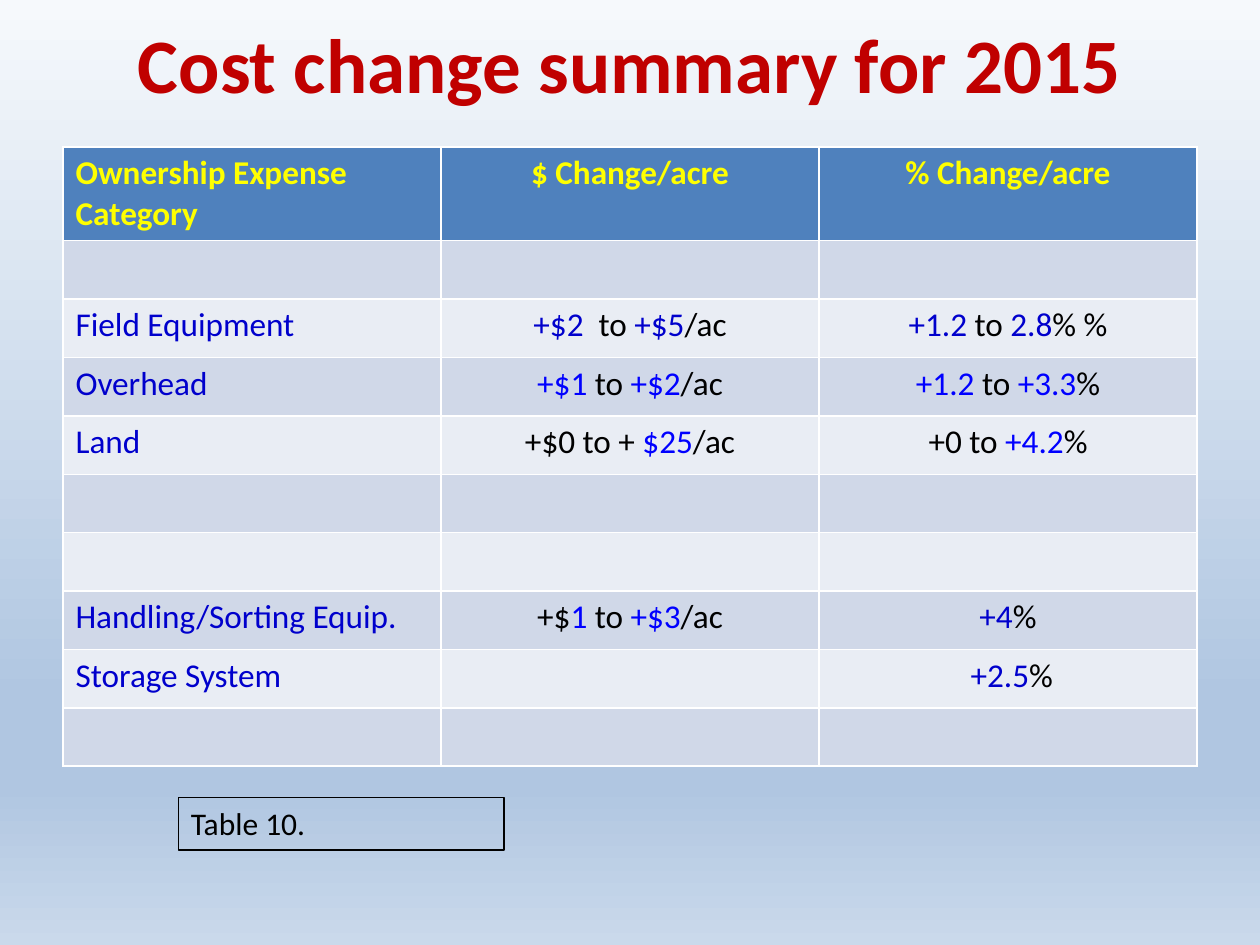
from lxml import etree
from pptx import Presentation
from pptx.dml.color import RGBColor
from pptx.enum import text
from pptx.oxml import ns
from pptx.util import Pt

BLACK = RGBColor(0x00, 0x00, 0x00)
NAVY = RGBColor(0x00, 0x00, 0xCC)
BLUE = RGBColor(0x00, 0x00, 0xFF)
RED = RGBColor(0xC0, 0x00, 0x00)
YELLOW = RGBColor(0xFF, 0xFF, 0x00)
HEADER = RGBColor(0x4F, 0x81, 0xBD)
BANDS = (RGBColor(0xE9, 0xED, 0xF4), RGBColor(0xD0, 0xD8, 0xE8))
SKY = ((0, "F6F9FC"), (74, "B0C6E1"), (83, "B0C6E1"), (100, "CAD9EB"))

EMPTY = ((), (), ())
HEADINGS = tuple(
    ((label, YELLOW),)
    for label in ("Ownership Expense Category", "$ Change/acre", "% Change/acre")
)
COSTS = (
    EMPTY,
    (
        (("Field Equipment", NAVY),),
        (("+$2  ", NAVY), ("to", BLACK), (" +$5", NAVY), ("/ac", BLACK)),
        (("+1.2 ", NAVY), ("to ", BLACK), ("2.8", NAVY), ("% %", BLACK)),
    ),
    (
        (("Overhead", NAVY),),
        (("+$1 ", BLUE), ("to ", BLACK), ("+$2", BLUE), ("/ac", BLACK)),
        (("+1.2 ", BLUE), ("to ", BLACK), ("+3.3", BLUE), ("%", BLACK)),
    ),
    (
        (("Land", NAVY),),
        (("+$0 to + ", BLACK), ("$25", BLUE), ("/ac", BLACK)),
        (("+0 to ", BLACK), ("+4.2", BLUE), ("%", BLACK)),
    ),
    EMPTY,
    EMPTY,
    (
        (("Handling/Sorting Equip.", NAVY),),
        (("+$", BLACK), ("1 ", BLUE), ("to ", BLACK), ("+$3", BLUE), ("/ac", BLACK)),
        (("+4", NAVY), ("%", BLACK)),
    ),
    (
        (("Storage System", NAVY),),
        (),
        ((" +2.5", NAVY), ("%", BLACK)),
    ),
    EMPTY,
)


class Painter:
    """Holds the text style and the current page, and draws each kind of element."""

    def __init__(self, page, font="Calibri"):
        self.page = page
        self.font = font

    def style(self, para, size, bold=False, color=None):
        para.font.name = self.font
        para.font.size = Pt(size)
        para.font.bold = bold
        if color is not None:
            para.font.color.rgb = color

    def background(self, stops):
        fill = self.page.background.fill
        fill.gradient()
        fill.gradient_angle = 270
        stop_list = next(self.page.element.iter(ns.qn("a:gsLst")))
        for stop in list(stop_list):
            stop_list.remove(stop)
        for percent, color in stops:
            stop = etree.SubElement(stop_list, ns.qn("a:gs"), pos=str(percent * 1000))
            etree.SubElement(stop, ns.qn("a:srgbClr"), val=color)

    def title(self, wording, left, top, width, height):
        box = self.page.shapes.title
        box.left, box.top, box.width, box.height = map(Pt, (left, top, width, height))
        frame = box.text_frame
        frame.text = wording
        frame.vertical_anchor = text.MSO_ANCHOR.MIDDLE
        para = frame.paragraphs[0]
        para.alignment = text.PP_ALIGN.CENTER
        self.style(para, 44, True, RED)

    def cell(self, cell, spans, fill, bold, centered):
        cell.fill.solid()
        cell.fill.fore_color.rgb = fill
        para = cell.text_frame.paragraphs[0]
        self.style(para, 19, bold)
        if centered:
            para.alignment = text.PP_ALIGN.CENTER
        for wording, color in spans:
            span = para.add_run()
            span.text = wording
            span.font.color.rgb = color

    def table(self, rows, left, top, width, header_height, row_height):
        height = header_height + row_height * (len(rows) - 1)
        table = self.page.shapes.add_table(
            len(rows), len(rows[0]), Pt(left), Pt(top), Pt(width), Pt(height)
        ).table
        for index, row in enumerate(rows):
            is_header = index == 0
            table.rows[index].height = Pt(header_height if is_header else row_height)
            fill = HEADER if is_header else BANDS[index % 2]
            for column, spans in enumerate(row):
                self.cell(table.cell(index, column), spans, fill, is_header, column > 0)

    def caption(self, wording, left, top, width, height):
        box = self.page.shapes.add_textbox(Pt(left), Pt(top), Pt(width), Pt(height))
        box.line.color.rgb = BLACK
        box.line.width = Pt(0.75)
        frame = box.text_frame
        frame.word_wrap = True
        frame.auto_size = text.MSO_AUTO_SIZE.SHAPE_TO_FIT_TEXT
        frame.text = wording
        self.style(frame.paragraphs[0], 18, color=BLACK)


def main():
    deck = Presentation()
    deck.slide_width, deck.slide_height = Pt(720), Pt(540)
    painter = Painter(deck.slides.add_slide(deck.slide_layouts[5]))
    painter.background(SKY)
    painter.title("Cost change summary for 2015", 36, 0, 648, 72)
    painter.table((HEADINGS, *COSTS), 36, 84, 648, 53.6, 33.37)
    painter.caption("Table 10.", 102, 455.6, 186, 30.2)
    deck.save("out.pptx")


if __name__ == "__main__":
    main()
